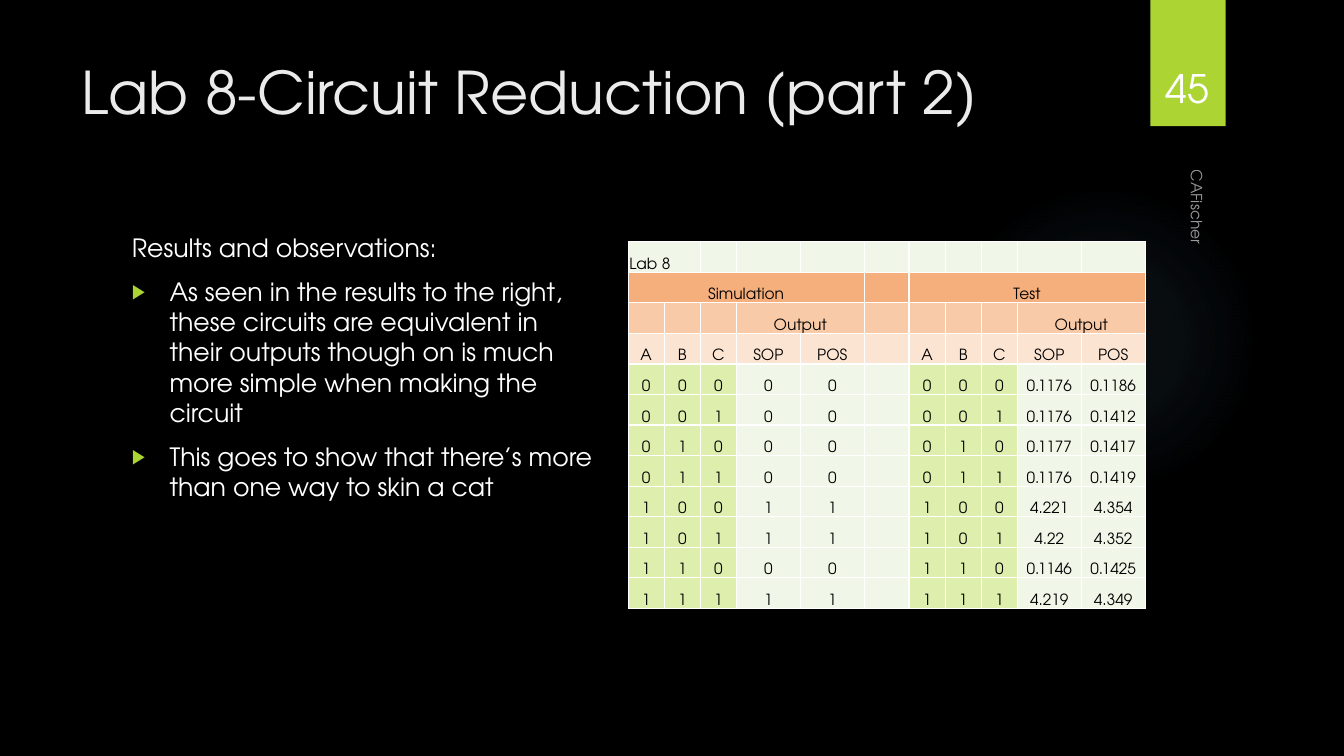
from itertools import product

from lxml.etree import SubElement
from pptx import Presentation
from pptx.dml.color import RGBColor
from pptx.enum.shapes import MSO_SHAPE as SHAPE
from pptx.enum.text import MSO_ANCHOR as ANCHOR, MSO_AUTO_SIZE as AUTO, PP_ALIGN as ALIGN
from pptx.oxml import parse_xml
from pptx.oxml.ns import nsdecls, qn
from pptx.util import Cm, Pt

BLACK = RGBColor(0x00, 0x00, 0x00)
WHITE = RGBColor(0xFF, 0xFF, 0xFF)
TITLE = RGBColor(0xEB, 0xEB, 0xEB)
LIME = RGBColor(0xAC, 0xD4, 0x33)
GLOW = RGBColor(0x7A, 0xC4, 0xF0)
PALE = RGBColor(0xF1, 0xF7, 0xE8)
INPUT = RGBColor(0xDE, 0xEE, 0xAD)
ORANGE = RGBColor(0xF5, 0xAF, 0x7C)
PEACH = RGBColor(0xF9, 0xCA, 0xA7)
CREAM = RGBColor(0xFC, 0xE4, 0xD3)


class Deck:
    font = "TeX Gyre Adventor"

    def __init__(self):
        self.prs = Presentation()
        self.prs.slide_width, self.prs.slide_height = Cm(33.87), Cm(19.05)

    def add_slide(self, color):
        self.s = self.prs.slides.add_slide(self.prs.slide_layouts[1])
        fill = self.s.background.fill
        fill.solid()
        fill.fore_color.rgb = color

    def run(self, p, text, size, color):
        r = p.add_run()
        r.text = text
        r.font.name, r.font.size = self.font, Pt(size)
        r.font.color.rgb = color
        return r

    def place(self, sp, box):
        sp.left, sp.top, sp.width, sp.height = (Cm(v) for v in box)
        tf = sp.text_frame
        tf.word_wrap, tf.auto_size = True, AUTO.NONE
        tf.vertical_anchor = ANCHOR.TOP
        return tf

    def title(self, text, box):
        p = self.place(self.s.shapes.title, box).paragraphs[0]
        p.alignment = ALIGN.LEFT
        self.run(p, text, 42, TITLE)

    def body(self, lead, items, box):
        tf = self.place(self.s.placeholders[1], box)
        for i, text in enumerate([lead] + items):
            p = tf.add_paragraph() if i else tf.paragraphs[0]
            pPr = p._p.get_or_add_pPr()
            indent = Cm(0.95) if i else 0
            pPr.set("marL", str(indent))
            pPr.set("indent", str(-indent))
            if i:
                clr = SubElement(pPr, qn("a:buClr"))
                SubElement(clr, qn("a:srgbClr"), val=str(LIME))
                SubElement(pPr, qn("a:buSzPct"), val="80000")
                SubElement(pPr, qn("a:buFont"), typeface="Arial")
                SubElement(pPr, qn("a:buChar"), char="▶")
            else:
                SubElement(pPr, qn("a:buNone"))
            p.space_before = Pt(10 if i else 0)
            self.run(p, text, 18, WHITE)

    def shape(self, kind, box, color=None):
        sp = self.s.shapes.add_shape(kind, *(Cm(v) for v in box))
        sp.shadow.inherit = False
        sp.line.fill.background()
        if color is not None:
            sp.fill.solid()
            sp.fill.fore_color.rgb = color
        return sp

    def glow(self, box, color, stops):
        sp = self.shape(SHAPE.OVAL, box)
        gs = "".join(
            f'<a:gs pos="{pos * 1000}"><a:srgbClr val="{color}">'
            f'<a:alpha val="{alpha * 1000}"/></a:srgbClr></a:gs>'
            for pos, alpha in stops)
        sp._element.spPr.insert(2, parse_xml(
            f'<a:gradFill {nsdecls("a")}><a:gsLst>{gs}</a:gsLst><a:path path="circle">'
            '<a:fillToRect l="50000" t="50000" r="50000" b="50000"/></a:path></a:gradFill>'))

    def label(self, text, box, size, align=ALIGN.LEFT, rotation=0, alpha=100):
        sp = self.s.shapes.add_textbox(0, 0, 0, 0)
        tf = self.place(sp, box)
        sp.rotation = rotation
        tf.vertical_anchor = ANCHOR.BOTTOM
        p = tf.paragraphs[0]
        p.alignment = align
        r = self.run(p, text, size, WHITE)
        if alpha < 100:
            clr = r.font.fill._xPr.find(qn("a:solidFill"))[0]
            SubElement(clr, qn("a:alpha"), val=str(alpha * 1000))

    def cell(self, c, text, fill, align):
        c.margin_left = c.margin_right = c.margin_top = Cm(0.03)
        c.margin_bottom = 0
        c.vertical_anchor = ANCHOR.BOTTOM
        tcPr = c._tc.get_or_add_tcPr()
        for side in ("lnL", "lnR", "lnT", "lnB"):
            ln = SubElement(tcPr, qn(f"a:{side}"), w=str(Pt(1)))
            SubElement(SubElement(ln, qn("a:solidFill")), qn("a:srgbClr"), val=str(WHITE))
        c.fill.solid()
        c.fill.fore_color.rgb = fill
        p = c.text_frame.paragraphs[0]
        p.alignment = align
        if text:
            self.run(p, text, 11, BLACK)
        else:
            SubElement(p._p, qn("a:endParaRPr"), sz="1100")

    def table(self, rows, fills, merges, left, top, widths, row_height):
        frame = self.s.shapes.add_table(
            len(rows), len(widths), Cm(left), Cm(top),
            Cm(sum(widths)), Cm(row_height * len(rows)))
        tbl = frame.table
        tbl.first_row = tbl.horz_banding = False
        for col, width in zip(tbl.columns, widths):
            col.width = Cm(width)
        for row in tbl.rows:
            row.height = Cm(row_height)
        for i, j in product(range(len(rows)), range(len(widths))):
            align = ALIGN.CENTER if i else ALIGN.LEFT
            self.cell(tbl.cell(i, j), rows[i][j], fills[i][j], align)
        for i, first, last in merges:
            tbl.cell(i, first).merge(tbl.cell(i, last))


def main():
    deck = Deck()
    deck.add_slide(BLACK)

    # Backdrop and page tab
    deck.glow((23.9, 4.65, 7.82, 7.82), GLOW, [(0, 7), (36, 6), (69, 0)])
    deck.shape(SHAPE.RECTANGLE, (28.99, 0, 1.9, 3.18), LIME)

    # Title and observations
    deck.title("Lab 8-Circuit Reduction (part 2)", (1.8, 1.27, 26.14, 3.89))
    deck.body("Results and observations:", [
        "As seen in the results to the right, these circuits are equivalent in their "
        "outputs though on is much more simple when making the circuit",
        "This goes to show that there’s more than one way to skin a cat",
    ], (3.07, 5.72, 12.22, 11.66))

    # Truth table: simulated outputs beside measured voltages
    simulated = "00001101"
    measured = [("0.1176", "0.1186"), ("0.1176", "0.1412"), ("0.1177", "0.1417"),
                ("0.1176", "0.1419"), ("4.221", "4.354"), ("4.22", "4.352"),
                ("0.1146", "0.1425"), ("4.219", "4.349")]
    names = ["A", "B", "C", "SOP", "POS"]
    output = ["", "", "", "Output", ""]
    rows = [["Lab 8"] + [""] * 10,
            ["Simulation"] + [""] * 5 + ["Test"] + [""] * 4,
            output + [""] + output,
            names + [""] + names]
    for abc, out, volts in zip(product("01", repeat=3), simulated, measured):
        rows.append([*abc, out, out, "", *abc, *volts])
    fills = [[color] * 11 for color in (PALE, ORANGE, PEACH, CREAM)]
    fills += [[INPUT] * 3 + [PALE] * 3 + [INPUT] * 3 + [PALE] * 2] * len(measured)
    merges = [(0, 0, 1), (1, 0, 4), (1, 6, 10), (2, 3, 4), (2, 9, 10)]
    side = [0.91] * 3 + [1.61] * 2
    deck.table(rows, fills, merges, 15.83, 6.09, side + [1.13] + side, 0.77)

    # Footer and page number
    deck.label("CAFischer", (24.87, 8.97, 10.72, 0.84), 11, rotation=90, alpha=60)
    deck.label("45", (28.75, 0.81, 2.34, 2.13), 28, ALIGN.CENTER)

    deck.prs.save("out.pptx")


if __name__ == "__main__":
    main()
